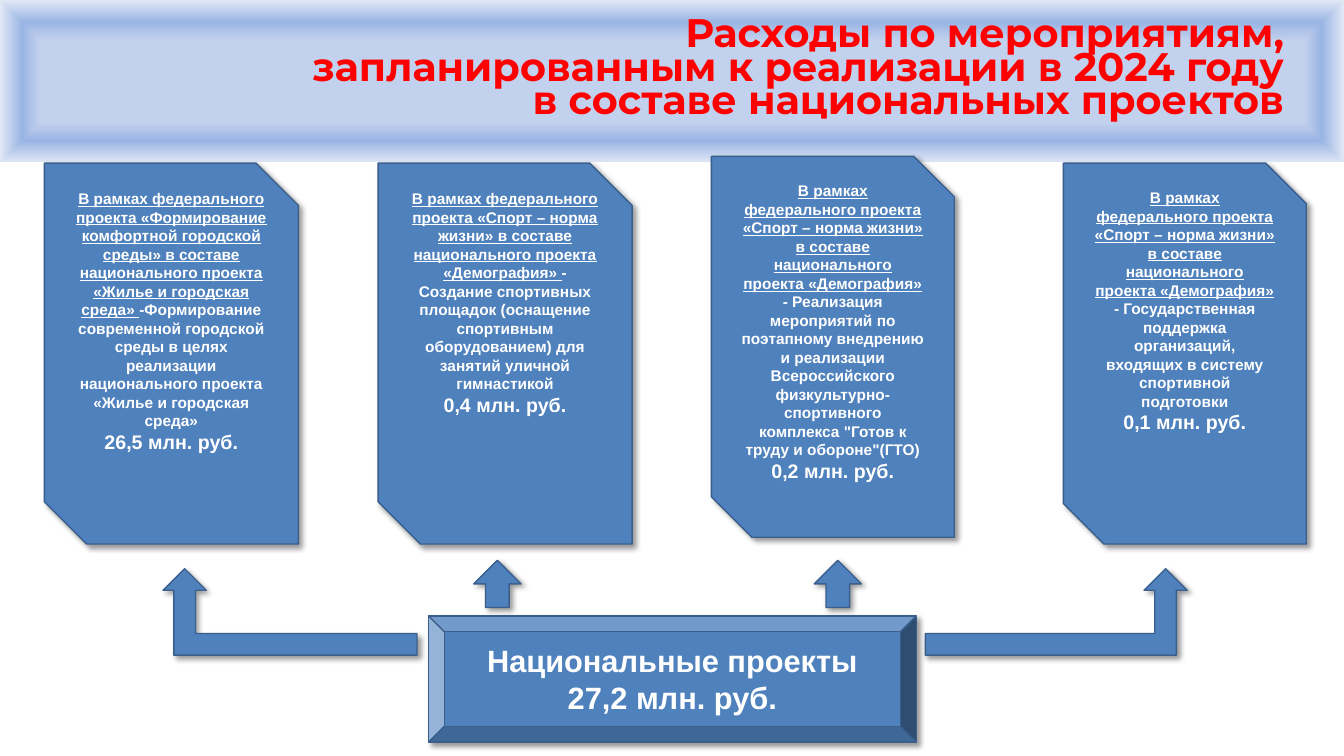
from lxml import etree
from pptx import Presentation
from pptx.dml.color import RGBColor
from pptx.enum import shapes, text
from pptx.oxml import parse_xml
from pptx.oxml.ns import nsdecls, qn
from pptx.util import Cm, Pt

WHITE = RGBColor(0xFF, 0xFF, 0xFF)
RED = RGBColor(0xFF, 0x00, 0x00)
BLUE = RGBColor(0x4F, 0x81, 0xBD)
DARK_BLUE = RGBColor(0x3A, 0x5F, 0x8C)
BAND_STOPS = [
    (50, RGBColor(0xC2, 0xD1, 0xED)),
    (73, RGBColor(0x9A, 0xB5, 0xE4)),
    (100, RGBColor(0xE1, 0xE8, 0xF5)),
]
SLIDE_WIDTH, SLIDE_HEIGHT = Cm(33.87), Cm(19.05)
BAND_HEIGHT = Cm(4.11)
KIND = shapes.MSO_SHAPE
SPORT = ("В рамках федерального проекта «Спорт – норма жизни» в составе "
         "национального проекта «Демография» ")
HOUSING = ("В рамках федерального проекта «Формирование комфортной городской среды» "
           "в составе национального проекта «Жилье и городская среда» ")
CARDS = [
    (1.12, 4.11, 6.4, HOUSING,
     "-Формирование современной городской среды в целях реализации "
     "национального проекта «Жилье и городская среда»", "26,5 млн. руб."),
    (9.53, 4.11, 6.4, SPORT,
     "- Создание спортивных площадок (оснащение спортивным оборудованием) "
     "для занятий уличной гимнастикой", "0,4 млн. руб."),
    (17.93, 3.94, 6.12, SPORT,
     "- Реализация мероприятий по поэтапному внедрению и реализации "
     "Всероссийского физкультурно-спортивного комплекса "
     "\"Готов к труду и обороне\"(ГТО)", "0,2 млн. руб."),
    (26.8, 4.11, 6.12, SPORT,
     "- Государственная поддержка организаций, входящих в систему "
     "спортивной подготовки", "0,1 млн. руб."),
]


def shadow_effects():
    return parse_xml(
        f'<a:effectLst {nsdecls("a")}>'
        '<a:outerShdw blurRad="50800" dist="38100" dir="2700000" algn="tl" rotWithShape="0">'
        '<a:srgbClr val="000000"><a:alpha val="40000"/></a:srgbClr>'
        '</a:outerShdw></a:effectLst>')


def style_run(run, size, color=WHITE, font="Arial", underline=False):
    run.font.size = Pt(size)
    run.font.name = font
    run.font.bold = True
    run.font.underline = underline
    run.font.color.rgb = color


def add_block(slide, kind, left, top, width, height):
    block = slide.shapes.add_shape(kind, Cm(left), Cm(top), Cm(width), Cm(height))
    block.fill.solid()
    block.fill.fore_color.rgb = BLUE
    block.line.color.rgb = DARK_BLUE
    block.line.width = Pt(1)
    block.shadow.inherit = False
    effects = block._element.spPr.find(qn("a:effectLst"))
    effects.getparent().replace(effects, shadow_effects())
    return block


def add_band(slide):
    band = slide.shapes.add_shape(KIND.RECTANGLE, 0, 0, SLIDE_WIDTH, BAND_HEIGHT)
    band.shadow.inherit = False
    band.line.fill.background()
    stops = "".join(
        f'<a:gs pos="{position * 1000}"><a:srgbClr val="{color}"/></a:gs>'
        for position, color in BAND_STOPS)
    gradient = parse_xml(
        f'<a:gradFill {nsdecls("a")} rotWithShape="1"><a:gsLst>{stops}</a:gsLst>'
        '<a:path path="shape"><a:fillToRect l="50000" t="50000" r="50000" b="50000"/>'
        '</a:path></a:gradFill>')
    band._element.spPr.find(qn("a:prstGeom")).addnext(gradient)
    edge = slide.shapes.add_connector(
        shapes.MSO_CONNECTOR.STRAIGHT, 0, BAND_HEIGHT, SLIDE_WIDTH, BAND_HEIGHT)
    edge.line.color.rgb = WHITE
    edge.line.width = Pt(2)
    etree.SubElement(edge._element.spPr, qn("a:effectLst"))


def add_title(slide):
    title = slide.shapes.add_textbox(Cm(6.81), Cm(0.41), Cm(25.81), Cm(2.77))
    frame = title.text_frame
    frame.word_wrap = True
    frame.vertical_anchor = text.MSO_ANCHOR.BOTTOM
    frame.text = ("Расходы по мероприятиям, запланированным к реализации "
                  "в 2024 году в составе национальных проектов")
    heading = frame.paragraphs[0]
    heading.alignment = text.PP_ALIGN.RIGHT
    heading.line_spacing = 0.7
    run = heading.runs[0]
    style_run(run, 28.4, RED, "Montserrat")
    properties = run.font._element
    properties.find(qn("a:solidFill")).addnext(shadow_effects())
    properties.insert(0, parse_xml(
        f'<a:ln {nsdecls("a")} w="19050"><a:solidFill><a:srgbClr val="{WHITE}"/>'
        '</a:solidFill></a:ln>'))


def add_card(slide, left, top, width, project, measure, amount):
    card = add_block(slide, KIND.SNIP_2_DIAG_RECTANGLE, left, top, width, 9.6)
    frame = card.text_frame
    frame.word_wrap = True
    frame.vertical_anchor = text.MSO_ANCHOR.TOP
    description, total = frame.paragraphs[0], frame.add_paragraph()
    for paragraph, content, size, underline in [
            (description, project, 11, True),
            (description, measure, 11, False),
            (total, amount, 14, False)]:
        paragraph.alignment = text.PP_ALIGN.CENTER
        run = paragraph.add_run()
        run.text = content
        style_run(run, size, underline=underline)


def add_total(slide):
    total = add_block(slide, KIND.BEVEL, 10.8, 15.52, 12.29, 3.18)
    frame = total.text_frame
    frame.word_wrap = True
    frame.vertical_anchor = text.MSO_ANCHOR.MIDDLE
    frame.text = "Национальные проекты\n27,2 млн. руб."
    for paragraph in frame.paragraphs:
        paragraph.alignment = text.PP_ALIGN.CENTER
        style_run(paragraph.runs[0], 22)


def add_arrows(slide):
    add_block(slide, KIND.BENT_UP_ARROW, 23.32, 14.33, 6.6, 2.18)
    left_arrow = add_block(slide, KIND.BENT_UP_ARROW, 4.11, 14.33, 6.4, 2.18)
    left_arrow._element.spPr.find(qn("a:xfrm")).set("flipH", "1")
    for left in (11.94, 20.52):
        add_block(slide, KIND.UP_ARROW, left, 14.12, 1.19, 1.19)


def main():
    deck = Presentation()
    deck.slide_width, deck.slide_height = SLIDE_WIDTH, SLIDE_HEIGHT
    slide = deck.slides.add_slide(deck.slide_layouts[6])
    add_band(slide)
    add_total(slide)
    for card in CARDS:
        add_card(slide, *card)
    add_title(slide)
    add_arrows(slide)
    deck.save("out.pptx")


if __name__ == "__main__":
    main()
